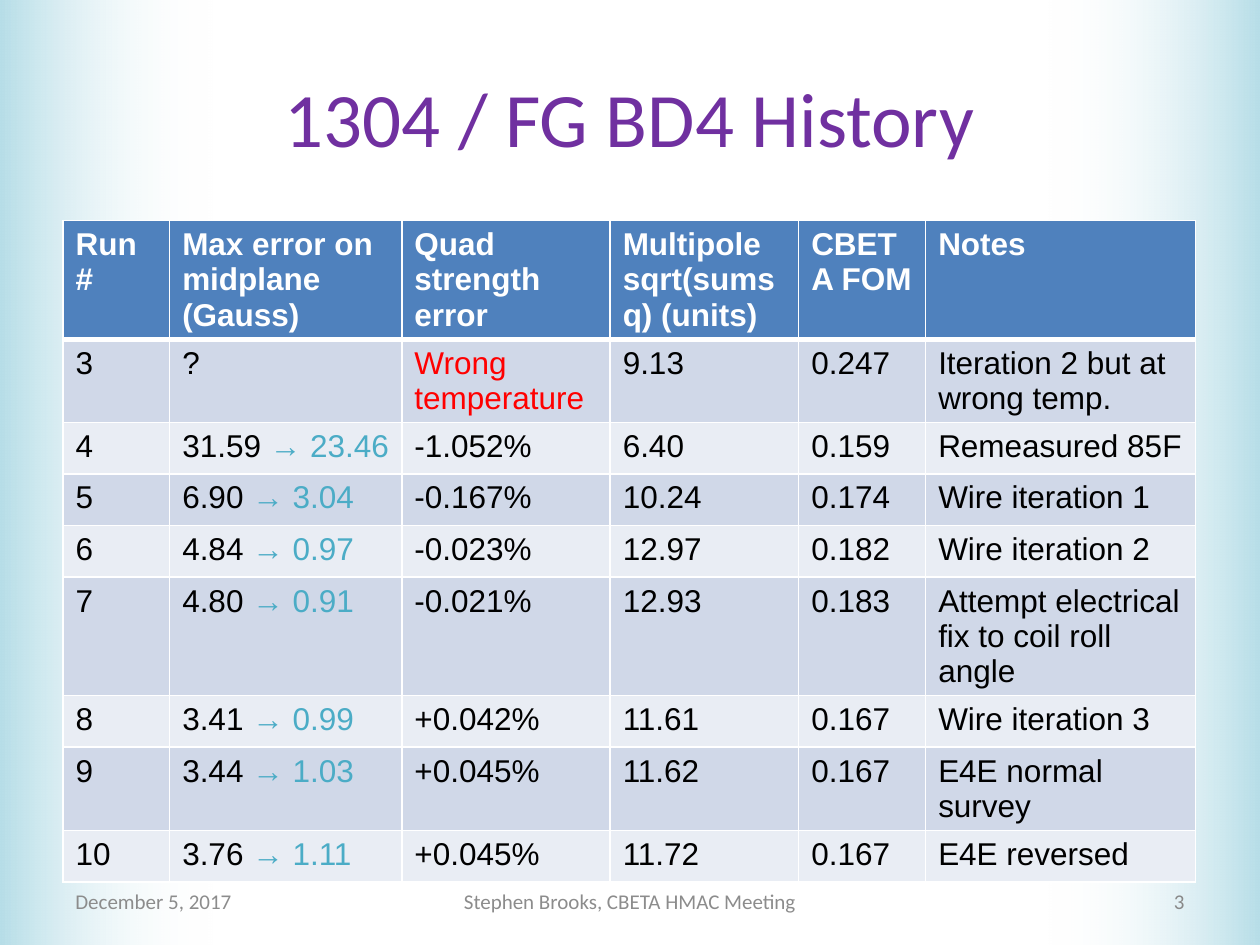
from lxml.etree import SubElement
from pptx import Presentation
from pptx.dml.color import RGBColor
from pptx.enum.shapes import MSO_SHAPE as Preset
from pptx.enum.text import MSO_ANCHOR as Anchor, PP_ALIGN as Align
from pptx.oxml.ns import qn
from pptx.util import Cm, Pt

COLOURS = {
    "edge": "B7DEE8", "white": "FFFFFF", "title": "7030A0", "header": "4F81BD",
    "odd": "D0D8E8", "even": "E9EDF4", "text": "000000", "warning": "FF0000",
    "after": "4BACC6", "footer": "8C8C8C", "number": "898989",
}
PAGE_WIDTH, PAGE_HEIGHT = 25.4, 19.05
BAND_WIDTH = 4.29
COLUMN_WIDTHS = [2.15, 4.68, 4.2, 3.8, 2.56, 5.44]
ROW_HEIGHT = 1.04
HEADINGS = ["Run #", "Max error on midplane (Gauss)", "Quad strength error",
            "Multipole sqrt(sumsq) (units)", "CBETA FOM", "Notes"]
RUNS = [
    ("3", "?", "Wrong temperature", "9.13", "0.247", "Iteration 2 but at wrong temp."),
    ("4", "31.59 → 23.46", "-1.052%", "6.40", "0.159", "Remeasured 85F"),
    ("5", "6.90 → 3.04", "-0.167%", "10.24", "0.174", "Wire iteration 1"),
    ("6", "4.84 → 0.97", "-0.023%", "12.97", "0.182", "Wire iteration 2"),
    ("7", "4.80 → 0.91", "-0.021%", "12.93", "0.183",
     "Attempt electrical fix to coil roll angle"),
    ("8", "3.41 → 0.99", "+0.042%", "11.61", "0.167", "Wire iteration 3"),
    ("9", "3.44 → 1.03", "+0.045%", "11.62", "0.167", "E4E normal survey"),
    ("10", "3.76 → 1.11", "+0.045%", "11.72", "0.167", "E4E reversed"),
]


def colour(name):
    return RGBColor.from_string(COLOURS[name])


def write(para, text, size=18, font="Arial", ink="text", bold=False, align=None):
    """Append one formatted span to a paragraph."""
    span = para.add_run()
    span.text = text
    span.font.size = Pt(size)
    span.font.name = font
    span.font.bold = bold
    span.font.color.rgb = colour(ink)
    if align is not None:
        para.alignment = align


def add_edge_band(page, left, top, width, height, rotation=0):
    """Add a band that fades to clear, behind everything else."""
    band = page.shapes.add_shape(Preset.RECTANGLE, Cm(left), Cm(top), Cm(width), Cm(height))
    band.rotation = rotation
    band.shadow.inherit = False
    band.line.fill.background()
    band.fill.gradient()
    band.fill.gradient_angle = 0
    for stop, name, position in zip(band.fill.gradient_stops, ("edge", "white"), (0, 1)):
        stop.color.rgb = colour(name)
        stop.position = position
    clear = list(band.element.iter(qn("a:srgbClr")))[-1]
    SubElement(clear, qn("a:alpha"), val="0")
    band.element.getparent().insert(2, band.element)


def place_title(page, left, top, width, height):
    title = page.shapes.title
    title.left, title.top, title.width, title.height = map(Cm, (left, top, width, height))
    title.text_frame.vertical_anchor = Anchor.MIDDLE
    write(title.text_frame.paragraphs[0], "1304 / FG BD4 History", size=44,
          font="Calibri", ink="title", align=Align.CENTER)


def format_cell(cell, fill, top=1, bottom=1):
    """Give a cell white borders, in points, and a plain fill."""
    props = cell._tc.get_or_add_tcPr()
    for side, points in (("L", 1), ("R", 1), ("T", top), ("B", bottom)):
        line = SubElement(props, qn(f"a:ln{side}"), w=str(Pt(points)))
        paint = SubElement(line, qn("a:solidFill"))
        SubElement(paint, qn("a:srgbClr"), val=COLOURS["white"])
    cell.fill.solid()
    cell.fill.fore_color.rgb = colour(fill)


def add_history_table(page, left, top):
    rows, columns = len(RUNS) + 1, len(HEADINGS)
    table = page.shapes.add_table(rows, columns, Cm(left), Cm(top),
                                  Cm(sum(COLUMN_WIDTHS)), Cm(rows * ROW_HEIGHT)).table
    for column, width in zip(table.columns, COLUMN_WIDTHS):
        column.width = Cm(width)
    for row in table.rows:
        row.height = Cm(ROW_HEIGHT)

    for cell, heading in zip(table.rows[0].cells, HEADINGS):
        format_cell(cell, "header", bottom=3)
        write(cell.text_frame.paragraphs[0], heading, ink="white", bold=True)

    for index, run in enumerate(RUNS, start=1):
        for cell, text in zip(table.rows[index].cells, run):
            format_cell(cell, "odd" if index % 2 else "even", top=3 if index == 1 else 1)
            para = cell.text_frame.paragraphs[0]
            before, arrow, after = text.partition("→")
            write(para, before, ink="warning" if text.startswith("Wrong") else "text")
            if arrow:
                write(para, arrow + after, ink="after")


def add_footer(page, left, top, width, height):
    """Add the date, meeting and page number across one strip."""
    side, middle = 5.93, 8.04
    parts = [
        (left, side, "December 5, 2017", "footer", Align.LEFT),
        (left + (width - middle) / 2, middle, "Stephen Brooks, CBETA HMAC Meeting",
         "footer", Align.CENTER),
        (left + width - side, side, "3", "number", Align.RIGHT),
    ]
    for part_left, part_width, text, ink, align in parts:
        box = page.shapes.add_textbox(Cm(part_left), Cm(top), Cm(part_width), Cm(height))
        frame = box.text_frame
        frame.word_wrap = True
        frame.vertical_anchor = Anchor.MIDDLE
        write(frame.paragraphs[0], text, size=12, font="Calibri", ink=ink, align=align)


def main():
    deck = Presentation()
    deck.slide_width, deck.slide_height = Cm(PAGE_WIDTH), Cm(PAGE_HEIGHT)
    page = deck.slides.add_slide(deck.slide_layouts[5])
    page.background.fill.solid()
    page.background.fill.fore_color.rgb = colour("white")
    add_edge_band(page, 0, 0, BAND_WIDTH, PAGE_HEIGHT)
    add_edge_band(page, PAGE_WIDTH - BAND_WIDTH, 0, BAND_WIDTH, PAGE_HEIGHT, rotation=180)
    place_title(page, 1.27, 0.76, 22.86, 3.18)
    add_history_table(page, 1.27, 4.45)
    add_footer(page, 1.27, 17.66, 22.86, 1.01)
    deck.save("out.pptx")


if __name__ == "__main__":
    main()
